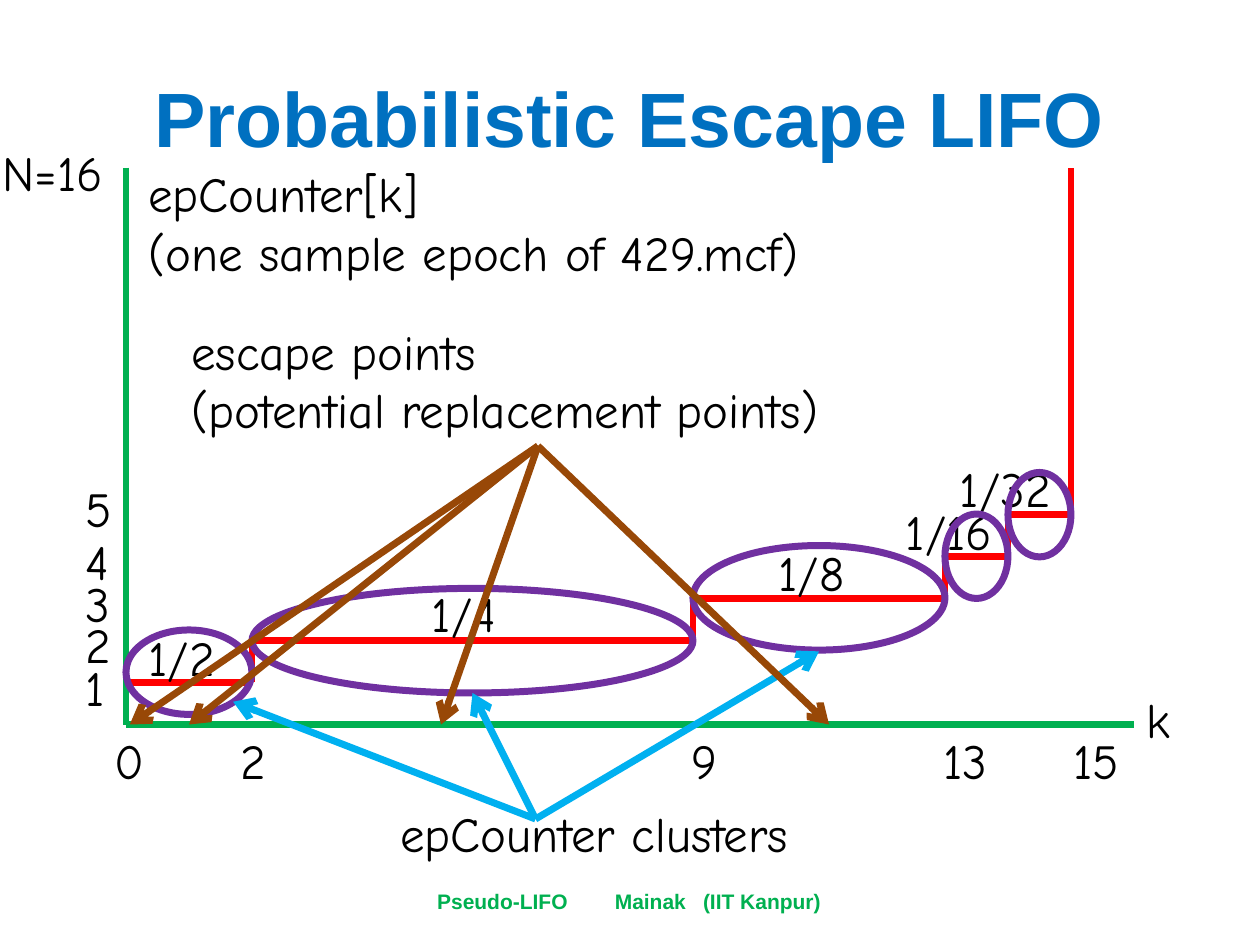
from pptx import Presentation
from pptx.util import Inches, Pt
from pptx.dml.color import RGBColor
from pptx.enum.shapes import MSO_SHAPE as SHAPE, MSO_CONNECTOR as LINK
from pptx.enum.text import MSO_ANCHOR as ANCHOR, MSO_AUTO_SIZE as FIT, PP_ALIGN as ALIGN
from pptx.oxml.ns import qn
from lxml.etree import SubElement

GREEN, RED, PURPLE = "00B050", "FF0000", "7030A0"
CYAN, BROWN, BLUE, BLACK = "00B0F0", "984807", "0070C0", "000000"
HAND, SANS = "Comic Neue", "Arial"

TITLE = "Probabilistic Escape LIFO"
FOOTER = ["Pseudo-LIFO", "Mainak", "(IIT Kanpur)"]
TABS = [1.95, 2.65]
LEFT, TOP, BASE, RIGHT = 1, 1.33, 5.75, 9
RISE = 1 / 3
EDGES = [1, 2, 5.5, 7.5, 8, 8.5]

NOTES = [
    (["k"], 9, 5.42, 0.41),
    (["epCounter[k]", "(one sample epoch of 429.mcf)"], 1.08, 1.25, 5.81),
    (["N=16"], -0.08, 1.08, 1.13),
]
TICKS = [("0", 0.81), ("2", 1.81), ("9", 5.39), ("13", 7.39), ("15", 8.42)]
LEVELS = [("1", 5.17), ("2", 4.83), ("3", 4.5), ("4", 4.17), ("5", 3.75)]
SHARES = [
    ("1/2", 1.08, 4.93), ("1/4", 3.33, 4.58), ("1/8", 6.08, 4.26),
    ("1/16", 7.09, 3.93), ("1/32", 7.52, 3.59),
]
RINGS = [(5, 0.67), (4.67, 0.83), (4.33, 0.83), (4.08, 0.67), (3.75, 0.67)]
CALLS = [
    (["epCounter clusters"], 3.08, 6.33, 3.67, CYAN, (4.25, 6.5),
     [(1.85, 5.57), (3.75, 5.5), (6.5, 5.17)]),
    (["escape points", "(potential replacement points)"], 1.42, 2.5, 5.72, BROWN,
     (4.27, 3.54), [(x, BASE) for x in (1.03, 1.5, 3.5, 6.58)]),
]

deck = Presentation()
deck.slide_width, deck.slide_height = Inches(10), Inches(7.5)
slide = deck.slides.add_slide(deck.slide_layouts[5])
shapes = slide.shapes


def tint(hue):
    return RGBColor.from_string(hue)


def write(para, text, size=28, face=HAND, hue=BLACK, bold=False):
    run = para.add_run()
    run.text = text
    font = run.font
    font.size, font.name, font.bold = Pt(size), face, bold
    font.color.rgb = tint(hue)


def label(lines, x, y, wide):
    tall = 0.57 + 0.47 * (len(lines) - 1)
    box = shapes.add_textbox(Inches(x), Inches(y), Inches(wide), Inches(tall))
    frame = box.text_frame
    frame.word_wrap = False
    frame.auto_size = FIT.SHAPE_TO_FIT_TEXT
    for i, text in enumerate(lines):
        write(frame.add_paragraph() if i else frame.paragraphs[0], text)


def line(start, end, hue, arrow=False):
    link = shapes.add_connector(LINK.STRAIGHT, *map(Inches, start + end))
    link.line.color.rgb = tint(hue)
    link.line.width = Pt(4)
    props = link._element.spPr
    if arrow:
        SubElement(props.find(qn("a:ln")), qn("a:tailEnd"), type="arrow")
    SubElement(props, qn("a:effectLst"))


def ring(x, y, wide, tall):
    oval = shapes.add_shape(SHAPE.OVAL, *map(Inches, (x, y, wide, tall)))
    oval.shadow.inherit = False
    oval.fill.background()
    oval.line.color.rgb = tint(PURPLE)
    oval.line.width = Pt(4)


title = shapes.title
title.left, title.top, title.width, title.height = map(Inches, (0, 0.3, 10, 1.25))
title.text_frame.vertical_anchor = ANCHOR.MIDDLE
head = title.text_frame.paragraphs[0]
head.alignment = ALIGN.CENTER
write(head, TITLE, 44, SANS, BLUE, True)

foot = shapes.add_textbox(*map(Inches, (2.83, 6.95, 4.33, 0.4))).text_frame
foot.word_wrap = True
foot.vertical_anchor = ANCHOR.MIDDLE
foot.margin_left = Inches(0.64)
para = foot.paragraphs[0]
stops = SubElement(para._p.get_or_add_pPr(), qn("a:tabLst"))
for stop in TABS:
    SubElement(stops, qn("a:tab"), pos=str(Inches(stop - 0.54)), algn="l")
write(para, "\t".join(FOOTER), 12, SANS, GREEN, True)

line((LEFT, TOP), (LEFT, BASE), GREEN)
line((LEFT, BASE), (RIGHT, BASE), GREEN)

spans = list(zip(EDGES, EDGES[1:]))
steps = [BASE - RISE * (i + 1) for i in range(len(spans))]
for (x, end), y, peak in zip(spans, steps, steps[1:] + [TOP]):
    line((x, y), (end, y), RED)
    line((end, y), (end, peak), RED)

for note in NOTES:
    label(*note)
for text, x in TICKS:
    label([text], x, BASE, 0.26 + 0.18 * len(text))
for text, y in LEVELS:
    label([text], 0.58, y, 0.44)
for text, x, y in SHARES:
    label([text], x, y, 0.28 + 0.18 * len(text))
for (x, end), (y, tall) in zip(spans, RINGS):
    ring(x, y, end - x, tall)

for lines, x, y, wide, hue, start, ends in CALLS:
    label(lines, x, y, wide)
    for end in ends:
        line(start, end, hue, True)

deck.save("out.pptx")
